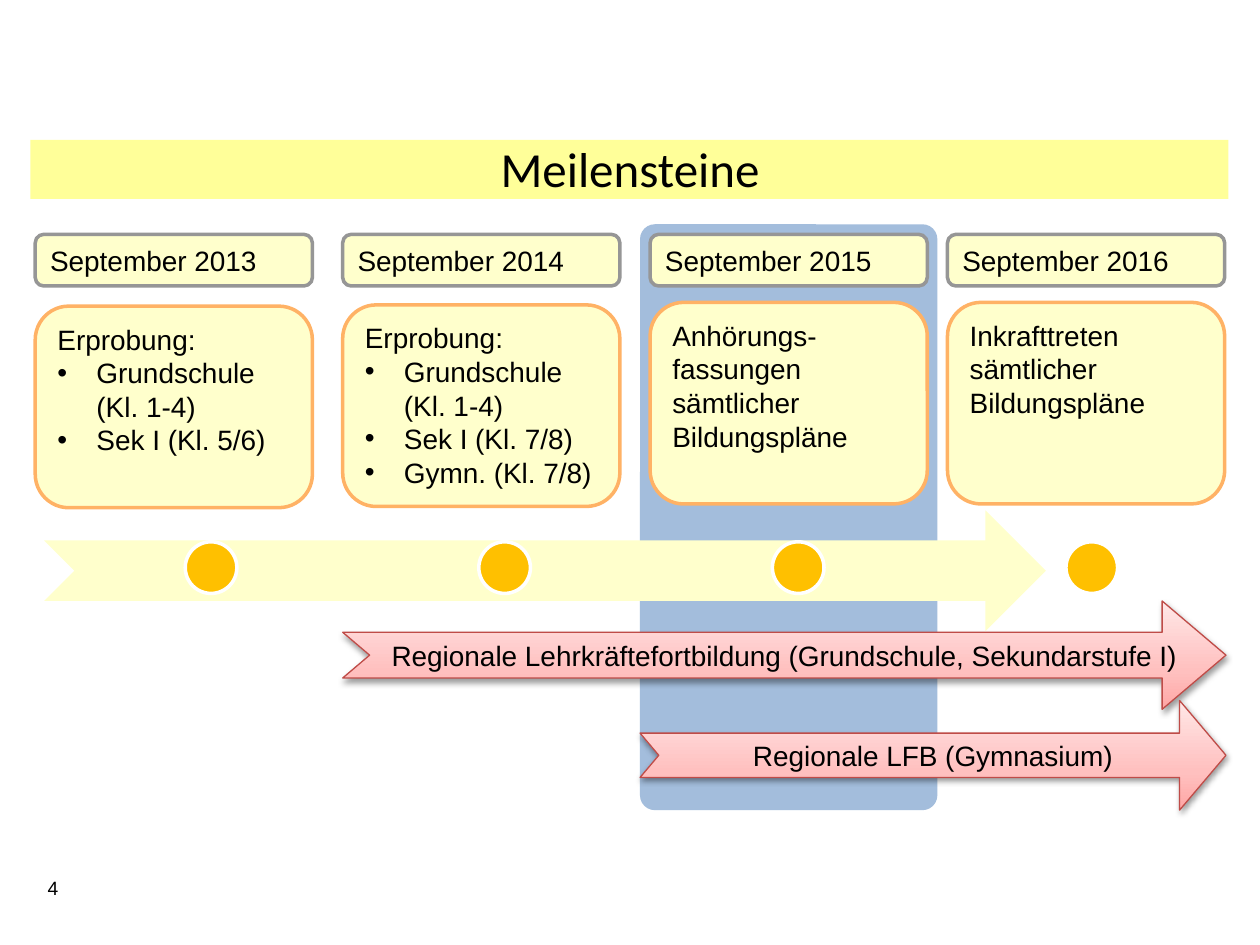
from dataclasses import dataclass

from lxml import etree
from pptx import Presentation
from pptx import util as u
from pptx.dml.color import RGBColor
from pptx.enum import shapes, text
from pptx.oxml import parse_xml
from pptx.oxml.ns import nsdecls, qn

PX = 9144  # EMU per px, 100 px to the inch


@dataclass(frozen=True)
class Theme:
    ink: str = "000000"
    band: str = "FFFF99"
    pale: str = "FFFFCC"
    date_line: str = "969696"
    card_line: str = "FFB265"
    focus: str = "4F81BD"
    focus_alpha: int = 52
    dot: str = "FFC000"
    dot_line: str = "FFFFFF"
    training_line: str = "BF4C48"
    training_stops: tuple = ((0, "FFA6A5"), (35, "FFC0BF"), (100, "FFE7E7"))
    font: str = "Arial"
    title_font: str = "Calibri"
    title_size: int = 28
    size: int = 16
    number_size: int = 11


THEME = Theme()
KIND = shapes.MSO_SHAPE
LEFT, CENTER = text.PP_ALIGN.LEFT, text.PP_ALIGN.CENTER
TOP, MIDDLE = text.MSO_ANCHOR.TOP, text.MSO_ANCHOR.MIDDLE
INDENT = 31

# left, card top, date, card lines as (style, wording)
MILESTONES = (
    (28, 243, "September 2013",
     (("plain", "Erprobung:"), ("bullet", "Grundschule"),
      ("indent", "(Kl. 1-4)"), ("bullet", "Sek I (Kl. 5/6)"))),
    (272, 242, "September 2014",
     (("plain", "Erprobung:"), ("bullet", "Grundschule (Kl. 1-4)"),
      ("bullet", "Sek I (Kl. 7/8)"), ("bullet", "Gymn. (Kl. 7/8)"))),
    (516, 240, "September 2015",
     (("plain", "Anhörungs-fassungen sämtlicher Bildungspläne"),)),
    (752, 240, "September 2016",
     (("plain", "Inkrafttreten sämtlicher Bildungspläne"),)),
)


def apply(target, **values):
    for name, value in values.items():
        setattr(target, name, value)


def emu(box):
    return [side * PX for side in box]


def add_shape(page, kind, box, fill, line=None, width=2, adjust=()):
    shape = page.shapes.add_shape(kind, *emu(box))
    shape.shadow.inherit = False
    shape.fill.solid()
    shape.fill.fore_color.rgb = RGBColor.from_string(fill)
    if line:
        shape.line.color.rgb = RGBColor.from_string(line)
        shape.line.width = u.Pt(width)
    else:
        shape.line.fill.background()
    for index, value in enumerate(adjust):
        shape.adjustments[index] = value
    return shape


def set_indent(para, style):
    """Indent a paragraph and give it a hanging bullet where asked for."""
    if style == "plain":
        return
    props = para._p.get_or_add_pPr()
    props.set("marL", str(INDENT * PX))
    if style == "bullet":
        props.set("indent", str(-INDENT * PX))
        etree.SubElement(props, qn("a:buFont")).set("typeface", THEME.font)
        etree.SubElement(props, qn("a:buChar")).set("char", "•")


def write(shape, lines, align=LEFT, anchor=MIDDLE, size=THEME.size, font=THEME.font):
    frame = shape.text_frame
    apply(frame, word_wrap=True, auto_size=text.MSO_AUTO_SIZE.NONE, vertical_anchor=anchor)
    for index, (style, wording) in enumerate(lines):
        para = frame.add_paragraph() if index else frame.paragraphs[0]
        set_indent(para, style)
        para.alignment = align
        span = para.add_run()
        span.text = wording
        apply(span.font, name=font, size=u.Pt(size))
        span.font.color.rgb = RGBColor.from_string(THEME.ink)


def add_title(page, box, wording):
    left, top, width, height = box
    add_shape(page, KIND.RECTANGLE, (left + 24, top + 6, width - 49, height - 10), THEME.band)
    title = page.shapes.title
    page.shapes._spTree.append(title._element)  # in front of its band
    apply(title, **dict(zip(("left", "top", "width", "height"), emu(box))))
    write(title, [("plain", wording)], CENTER, MIDDLE, THEME.title_size, THEME.title_font)


def add_focus(page, box):
    panel = add_shape(page, KIND.ROUNDED_RECTANGLE, box, THEME.focus, adjust=(0.05,))
    color = panel._element.spPr.find(f"{qn('a:solidFill')}/{qn('a:srgbClr')}")
    etree.SubElement(color, qn("a:alpha")).set("val", str(THEME.focus_alpha * 1000))


def add_training(page, box, adjust, wording):
    """Add a notched arrow with a gradient from bottom to top and a soft shadow."""
    arrow = add_shape(page, KIND.NOTCHED_RIGHT_ARROW, box, THEME.pale,
                      THEME.training_line, 0.75, adjust)
    stops = "".join(f'<a:gs pos="{at * 1000}"><a:srgbClr val="{color}"/></a:gs>'
                    for at, color in THEME.training_stops)
    props = arrow._element.spPr
    props.replace(props.find(qn("a:solidFill")), parse_xml(
        f'<a:gradFill {nsdecls("a")} rotWithShape="1"><a:gsLst>{stops}</a:gsLst>'
        '<a:lin ang="16200000" scaled="0"/></a:gradFill>'))
    props.find(qn("a:effectLst")).append(parse_xml(
        f'<a:outerShdw {nsdecls("a")} blurRad="{u.Pt(3.1)}" dist="{u.Pt(1.6)}" '
        'dir="5400000" rotWithShape="0"><a:srgbClr val="000000">'
        '<a:alpha val="38000"/></a:srgbClr></a:outerShdw>'))
    write(arrow, [("plain", wording)], CENTER)


def add_timeline(page, box):
    left, top, width, height = box
    add_shape(page, KIND.NOTCHED_RIGHT_ARROW, box, THEME.pale)
    for index in range(len(MILESTONES)):
        add_shape(page, KIND.OVAL, (left + 112 + 233 * index, top + 25, 41, 41),
                  THEME.dot, THEME.dot_line)


def add_milestone(page, box, card_top, date, lines):
    left, top, width, height = box
    header = add_shape(page, KIND.ROUNDED_RECTANGLE, (left, top, width, 41),
                       THEME.pale, THEME.date_line)
    write(header, [("plain", date)])
    card = add_shape(page, KIND.ROUNDED_RECTANGLE, (left, card_top, width, 160),
                     THEME.pale, THEME.card_line)
    write(card, lines, anchor=TOP)


def add_page_number(page, box, number):
    label = page.shapes.add_textbox(*emu(box))
    write(label, [("plain", number)], size=THEME.number_size)


def main():
    deck = Presentation()
    apply(deck, slide_width=1000 * PX, slide_height=750 * PX)
    page = deck.slides.add_slide(deck.slide_layouts[5])
    add_title(page, (0, 105, 1000, 57), "Meilensteine")
    add_focus(page, (508, 178, 236, 465))
    add_training(page, (272, 477, 701, 86), (0.422, 0.589),
                 "Regionale Lehrkräftefortbildung (Grundschule, Sekundarstufe I)")
    add_training(page, (508, 556, 465, 87), (0.404, 0.423), "Regionale LFB (Gymnasium)")
    add_timeline(page, (35, 405, 795, 96))
    for left, card_top, date, lines in MILESTONES:
        add_milestone(page, (left, 186, 220, 217), card_top, date, lines)
    add_page_number(page, (28, 690, 55, 29), "4")
    deck.save("out.pptx")


if __name__ == "__main__":
    main()
